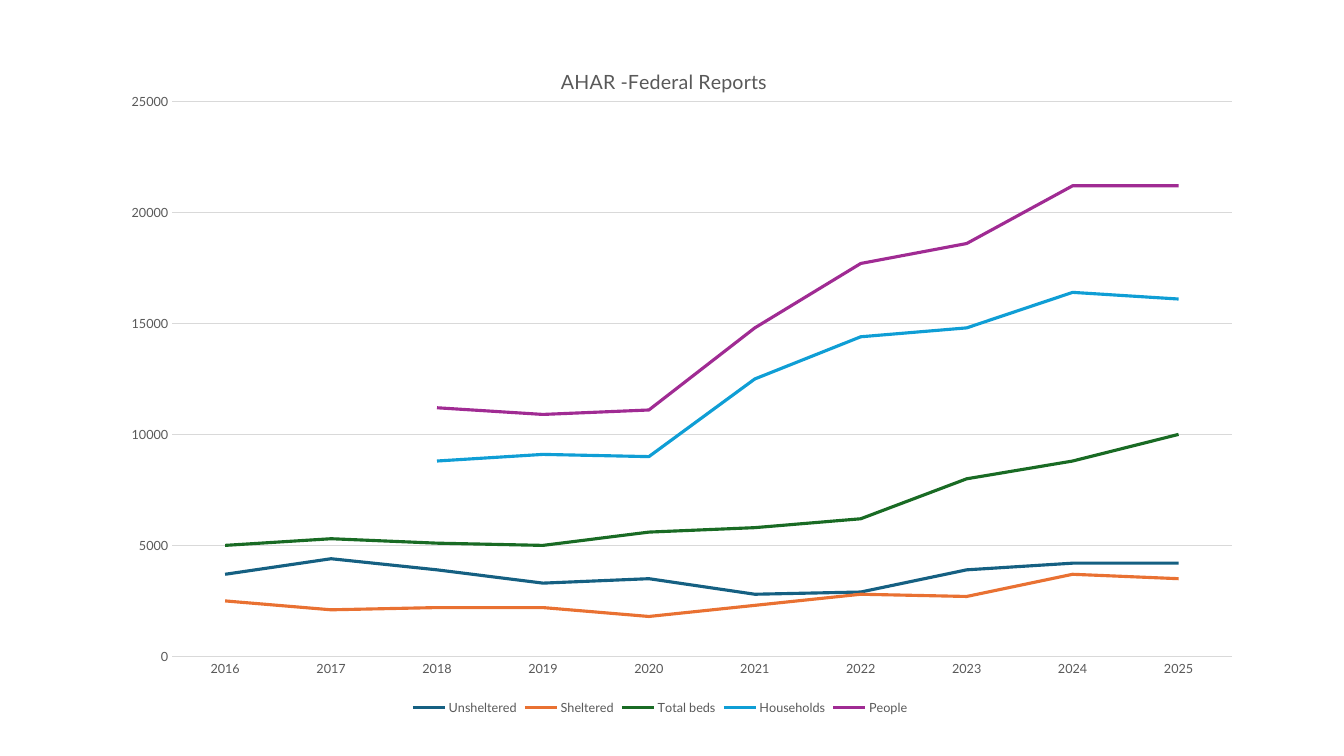
from lxml import etree
from pptx import Presentation
from pptx.chart.data import CategoryChartData
from pptx.dml.color import RGBColor
from pptx.enum.chart import XL_CHART_TYPE, XL_LEGEND_POSITION, XL_MARKER_STYLE, XL_TICK_MARK
from pptx.oxml import parse_xml
from pptx.oxml.ns import nsdecls, qn
from pptx.util import Inches, Pt

LINE_CHART = XL_CHART_TYPE.LINE
BOTTOM = XL_LEGEND_POSITION.BOTTOM
NO_MARKER = XL_MARKER_STYLE.NONE
NO_TICK = XL_TICK_MARK.NONE

TITLE = "AHAR -Federal Reports"
FONT, GREY, GRID = "Lato", "595959", "D9D9D9"
YEARS = [str(year) for year in range(2016, 2026)]
SERIES = [
    ("Unsheltered", "156082", [3700, 4400, 3900, 3300, 3500, 2800, 2900, 3900, 4200, 4200]),
    ("Sheltered", "E97132", [2500, 2100, 2200, 2200, 1800, 2300, 2800, 2700, 3700, 3500]),
    ("Total beds", "196B24", [5000, 5300, 5100, 5000, 5600, 5800, 6200, 8000, 8800, 10000]),
    ("Households", "0F9ED5", [None, None, 8800, 9100, 9000, 12500, 14400, 14800, 16400, 16100]),
    ("People", "A02B93", [None, None, 11200, 10900, 11100, 14800, 17700, 18600, 21200, 21200]),
]
CHART_BOX = (0.88, 0.4, 11.34, 6.74)
PLOT_LAYOUT = {"layoutTarget": "inner", "xMode": "edge", "yMode": "edge",
               "x": 0.07, "y": 0.09, "w": 0.93, "h": 0.82}
PLOT_LAYOUT.update(x=0.073, w=0.927, h=0.817)
TITLE_LAYOUT = {"xMode": "edge", "yMode": "edge", "x": 0.41, "y": 0.035}


def style_font(font, size):
    font.name, font.size, font.bold = FONT, Pt(size), False
    font.color.rgb = RGBColor.from_string(GREY)


def style_line(line, color, width):
    line.color.rgb = RGBColor.from_string(color)
    line.width = Pt(width)


def set_layout(parent, values, after=None):
    """Give a chart part a manual layout, placed after the named child or first."""
    for old in parent.findall(qn("c:layout")):
        parent.remove(old)
    layout = parse_xml(f"<c:layout {nsdecls('c')}/>")
    manual = etree.SubElement(layout, qn("c:manualLayout"))
    for tag, value in values.items():
        etree.SubElement(manual, qn(f"c:{tag}")).set("val", str(value))
    if after is None:
        parent.insert(0, layout)
    else:
        parent.find(qn(after)).addnext(layout)


prs = Presentation()
prs.slide_width, prs.slide_height = Inches(13.33), Inches(7.5)
slide = prs.slides.add_slide(prs.slide_layouts[6])

data = CategoryChartData()
data.categories = YEARS
for name, _, values in SERIES:
    data.add_series(name, values)
chart = slide.shapes.add_chart(LINE_CHART, *map(Inches, CHART_BOX), data).chart
style_font(chart.font, 10)

chart.has_title = True
title = chart.chart_title
title.text_frame.text = TITLE
style_font(title.text_frame.paragraphs[0].runs[0].font, 14)
title.include_in_layout = False
set_layout(title._element, TITLE_LAYOUT, after="c:tx")

plot = chart.plots[0]
plot.vary_by_categories = False
set_layout(chart._chartSpace.chart.plotArea, PLOT_LAYOUT)
for series, (_, color, _) in zip(plot.series, SERIES):
    series.smooth = False
    series.marker.style = NO_MARKER
    style_line(series.format.line, color, 2.25)

for axis in (chart.category_axis, chart.value_axis):
    axis.major_tick_mark = axis.minor_tick_mark = NO_TICK
    style_font(axis.tick_labels.font, 9)
style_line(chart.category_axis.format.line, GRID, 0.75)

value_axis = chart.value_axis
value_axis.minimum_scale, value_axis.maximum_scale = 0, 25000
value_axis.major_unit = 5000
value_axis.format.line.fill.background()
style_line(value_axis.major_gridlines.format.line, GRID, 0.75)

chart.has_legend = True
chart.legend.position = BOTTOM
chart.legend.include_in_layout = False
style_font(chart.legend.font, 9)

prs.save("out.pptx")
